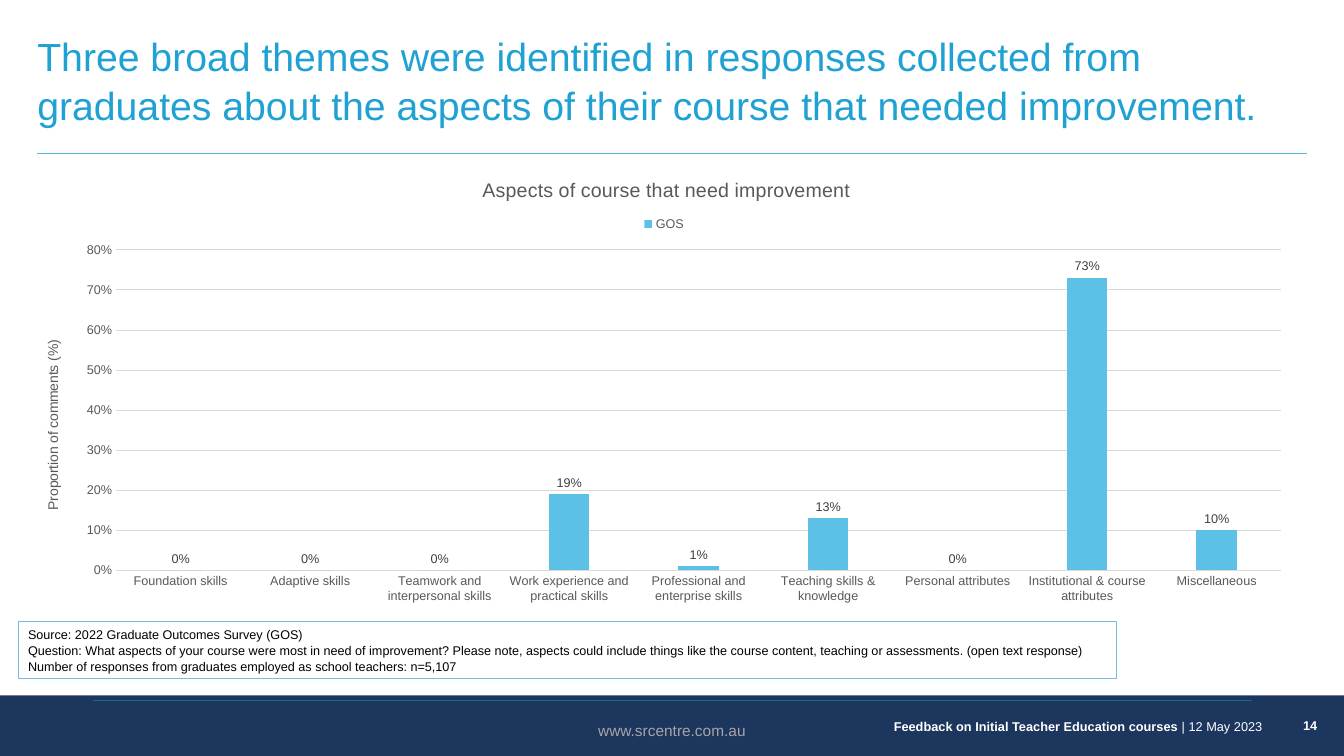
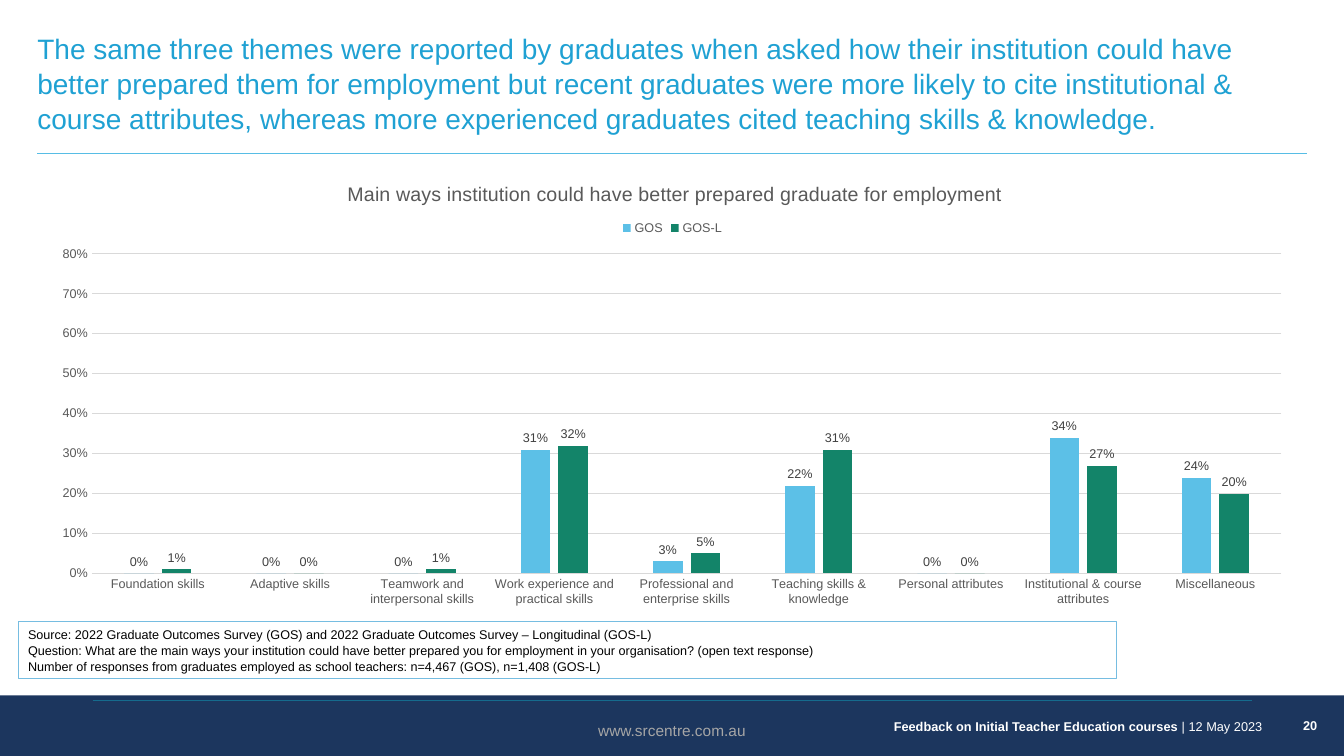
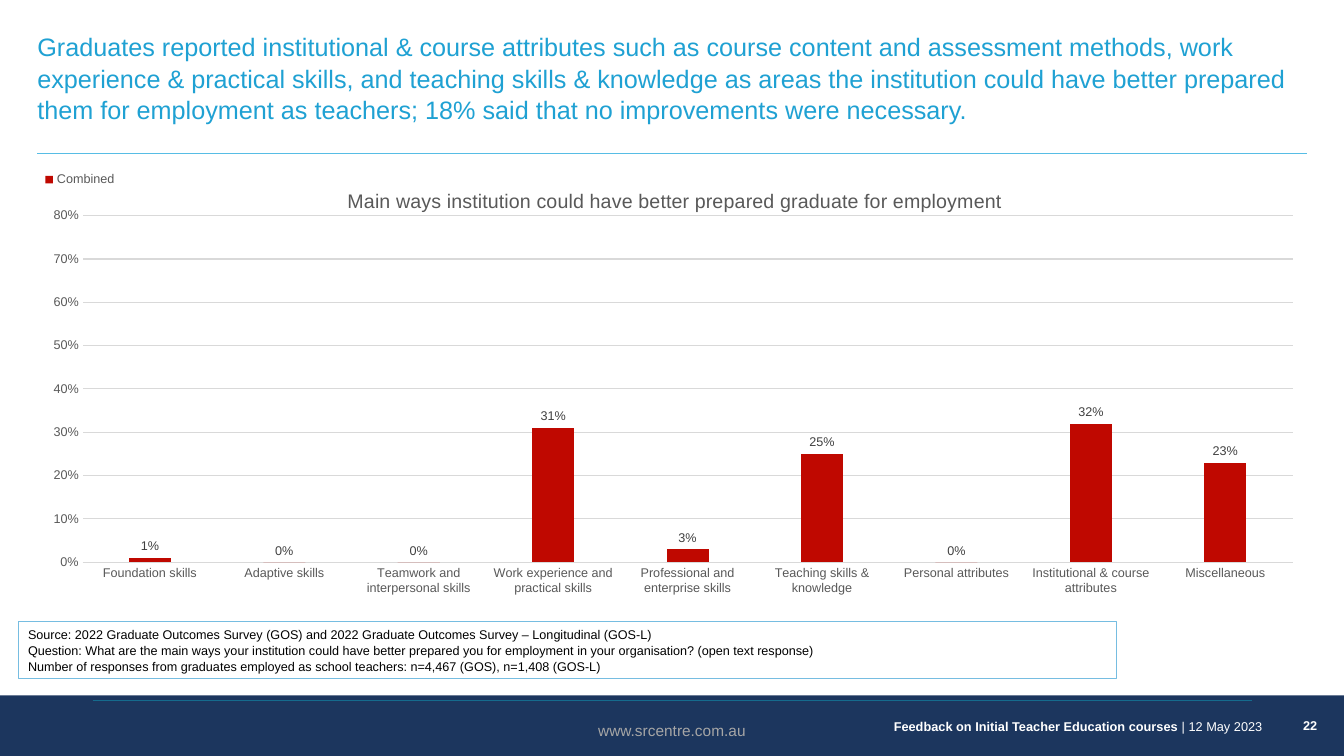
from dataclasses import dataclass
from typing import NamedTuple, Optional

from lxml.etree import SubElement
from pptx import Presentation
from pptx.chart.data import CategoryChartData
from pptx.dml.color import RGBColor
from pptx.enum.chart import XL_CHART_TYPE, XL_LABEL_POSITION, XL_LEGEND_POSITION, XL_TICK_MARK
from pptx.enum.shapes import MSO_CONNECTOR, MSO_SHAPE
from pptx.enum.text import MSO_ANCHOR, MSO_AUTO_SIZE, PP_ALIGN
from pptx.oxml.ns import qn
from pptx.util import Pt

PX = 9144
FACE = "Arial"
WHITE = RGBColor(0xFF, 0xFF, 0xFF)
BLACK = RGBColor(0x00, 0x00, 0x00)
NAVY = RGBColor(0x1C, 0x36, 0x5E)
TEAL = RGBColor(0x15, 0x6B, 0x8D)
AZURE = RGBColor(0x1F, 0xA1, 0xD3)
RULE = RGBColor(0x57, 0xBD, 0xE5)
FRAME = RGBColor(0x76, 0xBD, 0xE1)
MUTED = RGBColor(0xA6, 0xA6, 0xA6)
LABEL = RGBColor(0x40, 0x40, 0x40)
GRAY = RGBColor(0x59, 0x59, 0x59)
GRID = RGBColor(0xD9, 0xD9, 0xD9)
SKY = RGBColor(0x5C, 0xC0, 0xE7)
GREEN = RGBColor(0x13, 0x84, 0x69)
RED = RGBColor(0xBF, 0x08, 0x00)

CATS = (
    "Foundation skills",
    "Adaptive skills",
    "Teamwork and interpersonal skills",
    "Work experience and practical skills",
    "Professional and enterprise skills",
    "Teaching skills & knowledge",
    "Personal attributes",
    "Institutional & course attributes",
    "Miscellaneous",
)
WAYS = "Main ways institution could have better prepared graduate for employment"
BOTH = (
    "Source: 2022 Graduate Outcomes Survey (GOS) and 2022 Graduate Outcomes Survey – Longitudinal (GOS-L)",
    "Question: What are the main ways your institution could have better prepared you for employment in your organisation? (open text response)",
    "Number of responses from graduates employed as school teachers: n=4,467 (GOS), n=1,408 (GOS-L)",
)


class Box(NamedTuple):
    x: int
    y: int
    w: int = 0
    h: int = 0

    def emu(self) -> tuple:
        return tuple(n * PX for n in self)


class Series(NamedTuple):
    name: str
    color: RGBColor
    vals: tuple


@dataclass
class Graph:
    title: str
    area: Box
    plot: Box
    head: Box
    key: Box
    series: tuple
    axis: str = ""
    side: Optional[Box] = None


@dataclass
class Page:
    number: int
    title: str
    size: int
    graph: Graph
    notes: tuple


PAGES = (
    Page(
        14,
        "Three broad themes were identified in responses collected from graduates about the aspects of their course that needed improvement.",
        28,
        Graph(
            "Aspects of course that need improvement",
            Box(18, 154, 1278, 454), Box(115, 248, 1156, 318),
            Box(475, 172), Box(635, 211),
            (Series("GOS", SKY, (0, 0, 0, 0.19, 0.01, 0.13, 0, 0.73, 0.1)),),
            "Proportion of comments (%)", Box(41, 335),
        ),
        (
            "Source: 2022 Graduate Outcomes Survey (GOS)",
            "Question: What aspects of your course were most in need of improvement? Please note, aspects could include things like the course content, teaching or assessments. (open text response)",
            "Number of responses from graduates employed as school teachers: n=5,107",
        ),
    ),
    Page(
        20,
        "The same three themes were reported by graduates when asked how their institution could have better prepared them for employment but recent graduates were more likely to cite institutional & course attributes, whereas more experienced graduates cited teaching skills & knowledge.",
        20,
        Graph(
            WAYS,
            Box(37, 158, 1260, 453), Box(91, 252, 1180, 317),
            Box(341, 176), Box(614, 215),
            (
                Series("GOS", SKY, (0, 0, 0, 0.31, 0.03, 0.22, 0, 0.34, 0.24)),
                Series("GOS-L", GREEN, (0.01, 0, 0.01, 0.32, 0.05, 0.31, 0, 0.27, 0.2)),
            ),
        ),
        BOTH,
    ),
    Page(
        22,
        "Graduates reported institutional & course attributes such as course content and assessment methods, work experience & practical skills, and teaching skills & knowledge as areas the institution could have better prepared them for employment as teachers; 18% said that no improvements were necessary.",
        18,
        Graph(
            WAYS,
            Box(37, 165, 1260, 438), Box(82, 214, 1200, 344),
            Box(341, 183), Box(41, 167),
            (Series("Combined", RED, (0.01, 0, 0, 0.31, 0.03, 0.25, 0, 0.32, 0.23)),),
        ),
        BOTH,
    ),
)


def paint(font, size: float, color: RGBColor, bold: bool = False) -> None:
    font.name = FACE
    font.size = Pt(size)
    font.bold = bold
    font.color.rgb = color


def inset(frame, side: int = 0) -> None:
    frame.margin_left = frame.margin_right = side * PX
    frame.margin_top = frame.margin_bottom = 0


def rule(slide, left: int, right: int, y: int, color: RGBColor) -> None:
    line = slide.shapes.add_connector(
        MSO_CONNECTOR.STRAIGHT, left * PX, y * PX, right * PX, y * PX)
    line.line.color.rgb = color
    line.line.width = Pt(0.75)
    SubElement(line._element.spPr, qn("a:effectLst"))


def panel(slide, box: Box):
    shape = slide.shapes.add_shape(MSO_SHAPE.RECTANGLE, *box.emu())
    shape.shadow.inherit = False
    return shape


def write(slide, box: Box, runs: tuple, size: float, color: RGBColor, align: PP_ALIGN):
    frame = slide.shapes.add_textbox(*box.emu()).text_frame
    frame.word_wrap = True
    para = frame.paragraphs[0]
    para.alignment = align
    for text, bold in runs:
        run = para.add_run()
        run.text = text
        paint(run.font, size, color, bold)
    return frame


def footer(slide, number: int) -> None:
    band = panel(slide, Box(0, 690, 1333, 60))
    band.fill.solid()
    band.fill.fore_color.rgb = NAVY
    band.line.fill.background()
    runs = (("Feedback on Initial Teacher Education courses ", True), ("| 12 May 2023", False))
    name = write(slide, Box(454, 708, 812, 25), runs, 9.1, WHITE, PP_ALIGN.RIGHT)
    name.margin_right = 14 * PX
    name.vertical_anchor = MSO_ANCHOR.MIDDLE
    page = write(slide, Box(1266, 695, 67, 50), ((str(number), True),), 9.1, WHITE, PP_ALIGN.CENTER)
    inset(page)
    page.vertical_anchor = MSO_ANCHOR.MIDDLE
    write(slide, Box(497, 710, 339, 29), (("www.srcentre.com.au", False),), 11, MUTED, PP_ALIGN.CENTER)
    rule(slide, 92, 1242, 695, TEAL)


def header(slide, text: str, size: int) -> None:
    title = slide.shapes.title
    title.left, title.top, title.width, title.height = Box(37, 30, 1260, 69).emu()
    frame = title.text_frame
    frame.text = text
    frame.word_wrap = True
    frame.auto_size = MSO_AUTO_SIZE.NONE
    frame.vertical_anchor = MSO_ANCHOR.TOP
    inset(frame)
    para = frame.paragraphs[0]
    para.alignment = PP_ALIGN.LEFT
    para.line_spacing = 1.04
    paint(para.runs[0].font, size, AZURE)
    rule(slide, 37, 1296, 152, RULE)


def source(slide, notes: tuple) -> None:
    shape = panel(slide, Box(18, 617, 1089, 56))
    shape.fill.background()
    shape.line.color.rgb = FRAME
    shape.line.width = Pt(0.75)
    frame = shape.text_frame
    frame.word_wrap = True
    frame.vertical_anchor = MSO_ANCHOR.MIDDLE
    frame.text = "\n".join(notes)
    for para in frame.paragraphs:
        para.alignment = PP_ALIGN.LEFT
        para.line_spacing = 1.06
        paint(para.runs[0].font, 9, BLACK)


def place(node, prior: str, box: Box, area: Box) -> None:
    for old in node.findall(qn("c:layout")):
        node.remove(old)
    layout = SubElement(node, qn("c:layout"))
    inner = SubElement(layout, qn("c:manualLayout"))
    parts = {"xMode": "edge", "yMode": "edge"}
    if box.w:
        parts = {"layoutTarget": "inner", **parts}
    parts["x"] = (box.x - area.x) / area.w
    parts["y"] = (box.y - area.y) / area.h
    if box.w:
        parts["w"] = box.w / area.w
        parts["h"] = box.h / area.h
    for tag, value in parts.items():
        SubElement(inner, qn("c:" + tag)).set("val", str(value))
    node.insert(node.index(node.find(qn(prior))) + 1 if prior else 0, layout)


def caption(title, text: str, size: int, box: Box, area: Box) -> None:
    title.text_frame.text = text
    paint(title.text_frame.paragraphs[0].runs[0].font, size, GRAY)
    place(title._element, "c:tx", box, area)


def draw(slide, graph: Graph) -> None:
    data = CategoryChartData(number_format="0%")
    data.categories = CATS
    for item in graph.series:
        data.add_series(item.name, item.vals)
    chart = slide.shapes.add_chart(
        XL_CHART_TYPE.COLUMN_CLUSTERED, *graph.area.emu(), data).chart
    paint(chart.font, 10, BLACK)
    chart.has_title = True
    caption(chart.chart_title, graph.title, 14, graph.head, graph.area)
    chart.has_legend = True
    chart.legend.position = XL_LEGEND_POSITION.TOP
    chart.legend.include_in_layout = False
    paint(chart.legend.font, 9, GRAY)
    place(chart.legend._element, "c:legendPos", graph.key, graph.area)

    plot = chart.plots[0]
    plot.gap_width = 219
    plot.overlap = -27
    plot.vary_by_categories = False
    plot.has_data_labels = True
    marks = plot.data_labels
    marks.show_value = True
    marks.number_format = "0%"
    marks.number_format_is_linked = False
    marks.position = XL_LABEL_POSITION.OUTSIDE_END
    paint(marks.font, 9, LABEL)
    for item, bars in zip(graph.series, plot.series):
        bars.format.fill.solid()
        bars.format.fill.fore_color.rgb = item.color
    place(chart._chartSpace.chart.plotArea, "", graph.plot, graph.area)

    cats, vals = chart.category_axis, chart.value_axis
    for axis in (cats, vals):
        axis.major_tick_mark = axis.minor_tick_mark = XL_TICK_MARK.NONE
        paint(axis.tick_labels.font, 9, GRAY)
    vals.minimum_scale = 0
    vals.maximum_scale = 0.8
    vals.major_unit = 0.1
    vals.tick_labels.number_format = "0%"
    vals.tick_labels.number_format_is_linked = False
    vals.format.line.fill.background()
    vals.has_major_gridlines = True
    for line in (cats.format.line, vals.major_gridlines.format.line):
        line.color.rgb = GRID
        line.width = Pt(0.75)
    if graph.axis:
        title = vals.axis_title
        caption(title, graph.axis, 10, graph.side, graph.area)
        body = title._element.find(".//" + qn("a:bodyPr"))
        body.set("rot", "-5400000")
        body.set("vert", "horz")


def main() -> None:
    deck = Presentation()
    deck.slide_width = 1333 * PX
    deck.slide_height = 750 * PX
    for page in PAGES:
        slide = deck.slides.add_slide(deck.slide_layouts[5])
        footer(slide, page.number)
        header(slide, page.title, page.size)
        draw(slide, page.graph)
        source(slide, page.notes)
    deck.save("out.pptx")


if __name__ == "__main__":
    main()
